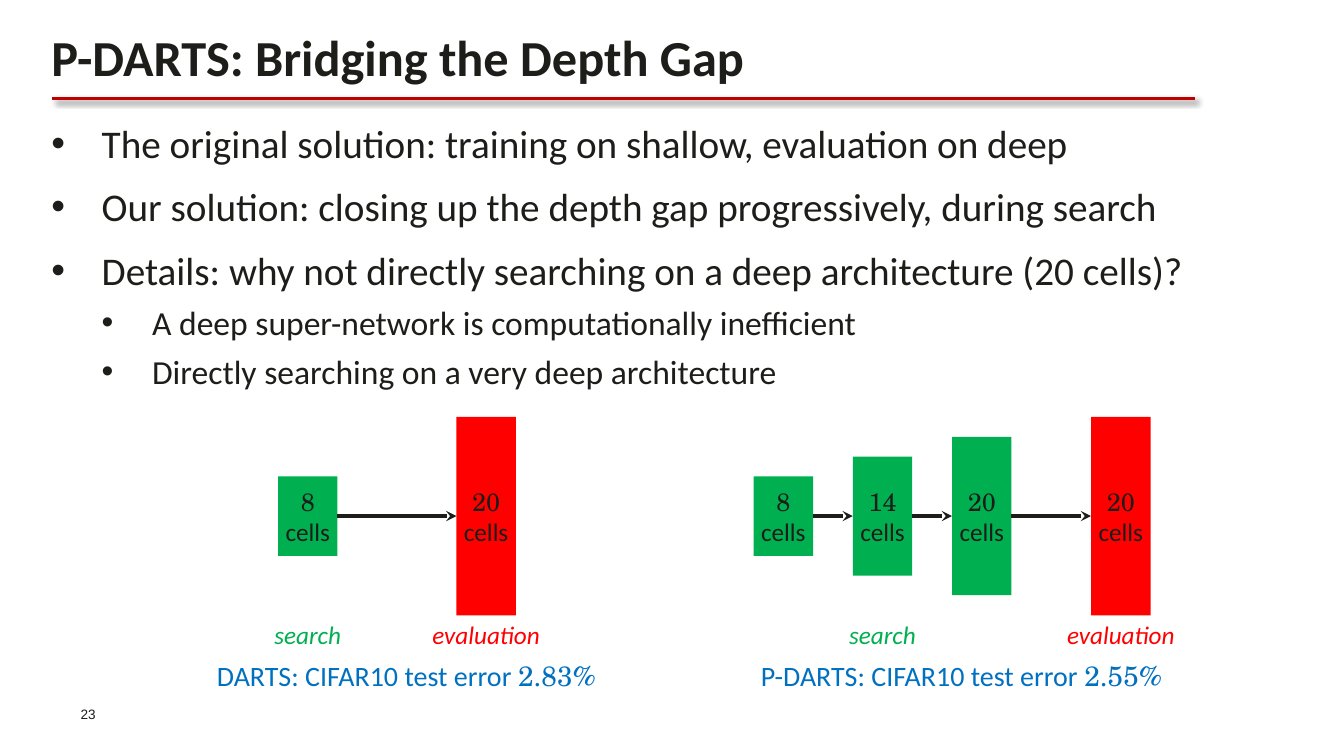
from dataclasses import dataclass

from lxml import etree
from pptx import Presentation
from pptx import util as u
from pptx.dml.color import RGBColor
from pptx.enum import shapes, text
from pptx.oxml import ns


@dataclass(frozen=True)
class Theme:
    sans: str = "Calibri"
    serif: str = "TeX Gyre Schola"
    small: str = "Arial"
    ink: str = "1D1D1A"
    rule: str = "C00000"
    search: str = "00B050"
    evaluation: str = "FF0000"
    caption: str = "0070C0"
    title_size: float = 36
    list_sizes: tuple = (28, 24)
    list_gaps: tuple = (12, 6)
    caption_size: float = 20
    label_size: float = 18
    number_size: float = 9.7


def sub(parent, tag, **attrs):
    return etree.SubElement(parent, ns.qn(tag), attrs)


def add_run(p, content, font, size, color, bold=False, italic=False):
    r = p.add_run()
    r.text = content
    r.font.name = font
    r.font.size = u.Pt(size)
    r.font.bold = bold
    r.font.italic = italic
    r.font.color.rgb = RGBColor.from_string(color)


class Deck:
    CELL_W, STEP, MID = 0.59, 0.39, 5.12
    PITCH = 0.985

    def __init__(self, prs, theme):
        self.theme = theme
        self.s = prs.slides.add_slide(prs.slide_layouts[1])

    def frame(self, sp, anchor=text.MSO_ANCHOR.MIDDLE):
        tf = sp.text_frame
        tf.word_wrap = True
        tf.auto_size = text.MSO_AUTO_SIZE.NONE
        tf.vertical_anchor = anchor
        tf.margin_left = tf.margin_right = tf.margin_top = tf.margin_bottom = 0
        return tf

    def place(self, sp, *box):
        sp.left, sp.top, sp.width, sp.height = map(u.Inches, box)

    def title(self, content):
        t, sp = self.theme, self.s.shapes.title
        self.place(sp, 0.51, 0.2, 11.34, 0.71)
        p = self.frame(sp).paragraphs[0]
        p.alignment = text.PP_ALIGN.LEFT
        add_run(p, content, t.sans, t.title_size, t.ink, bold=True)

    def bullets(self, items):
        t, sp = self.theme, self.s.placeholders[1]
        self.place(sp, 0.51, 1.18, 12.28, 5.67)
        tf = self.frame(sp, text.MSO_ANCHOR.TOP)
        for i, (level, content) in enumerate(items):
            p = tf.add_paragraph() if i else tf.paragraphs[0]
            p.level = level
            pPr = p._p.get_or_add_pPr()
            pPr.set("marL", str(u.Inches(0.5 * (level + 1))))
            pPr.set("indent", str(u.Inches(-0.5)))
            sub(pPr, "a:buChar", char="•")
            p.space_before = u.Pt(t.list_gaps[level] if i else 0)
            add_run(p, content, t.sans, t.list_sizes[level], t.ink)

    def textbox(self, box, runs, align=text.PP_ALIGN.CENTER, anchor=text.MSO_ANCHOR.MIDDLE):
        sp = self.s.shapes.add_textbox(*map(u.Inches, box))
        p = self.frame(sp, anchor).paragraphs[0]
        p.alignment = align
        for content, fmt in runs:
            add_run(p, content, **fmt)

    def line(self, x1, y1, x2, y2, color, width, arrow=False, shadow=False):
        sp = self.s.shapes.add_connector(
            shapes.MSO_CONNECTOR.STRAIGHT, *map(u.Inches, (x1, y1, x2, y2)))
        sp.line.color.rgb = RGBColor.from_string(color)
        sp.line.width = u.Pt(width)
        if arrow:
            sub(sp.line._get_or_add_ln(), "a:tailEnd", type="stealth")
        effects = sub(sp._element.spPr, "a:effectLst")
        if shadow:
            outer = sub(effects, "a:outerShdw", blurRad=str(u.Pt(4)), dist=str(u.Pt(3)),
                        dir="2700000", algn="tl", rotWithShape="0")
            sub(sub(outer, "a:srgbClr", val="000000"), "a:alpha", val="40000")

    def cell_box(self, x, count, height, color):
        t = self.theme
        sp = self.s.shapes.add_shape(
            shapes.MSO_SHAPE.RECTANGLE,
            *map(u.Inches, (x, self.MID - height / 2, self.CELL_W, height)))
        sp.shadow.inherit = False
        sp.fill.solid()
        sp.fill.fore_color.rgb = RGBColor.from_string(color)
        sp.line.fill.background()
        p = self.frame(sp).paragraphs[0]
        p.alignment = text.PP_ALIGN.CENTER
        add_run(p, f"{count} ", t.serif, t.label_size, t.ink)
        add_run(p, "cells", t.sans, t.label_size, t.ink)

    def label(self, center, content, color):
        fmt = dict(font=self.theme.sans, size=self.theme.label_size, color=color, italic=True)
        self.textbox((center - 0.69, 6.1, 1.38, 0.39), [(content, fmt)])

    def pipeline(self, caption, error, caption_x, search_x, search_counts, eval_x):
        t = self.theme
        fmt = dict(size=t.caption_size, color=t.caption)
        self.textbox((caption_x, 6.5, 4.53, 0.39),
                     [(f"{caption}: CIFAR10 test error ", dict(fmt, font=t.sans)),
                      (error, dict(fmt, font=t.serif))])
        xs = [search_x + i * self.PITCH for i in range(len(search_counts))]
        for i, (x, count) in enumerate(zip(xs, search_counts)):
            self.cell_box(x, count, self.STEP * (i + 2) + 0.01, t.search)
        self.cell_box(eval_x, 20, 1.97, t.evaluation)
        for x, following in zip(xs, xs[1:] + [eval_x]):
            self.line(x + self.CELL_W, self.MID, following, self.MID, t.ink, 2.5, arrow=True)
        self.label((xs[0] + xs[-1] + self.CELL_W) / 2, "search", t.search)
        self.label(eval_x + self.CELL_W / 2, "evaluation", t.evaluation)


def main():
    prs = Presentation()
    prs.slide_width, prs.slide_height = u.Inches(13.34), u.Inches(7.5)
    t = Theme()
    deck = Deck(prs, t)
    deck.title("P-DARTS: Bridging the Depth Gap")
    deck.line(0.52, 0.98, 11.86, 0.98, t.rule, 2.25, shadow=True)
    deck.bullets([
        (0, "The original solution: training on shallow, evaluation on deep"),
        (0, "Our solution: closing up the depth gap progressively, during search"),
        (0, "Details: why not directly searching on a deep architecture (20 cells)?"),
        (1, "A deep super-network is computationally inefficient"),
        (1, "Directly searching on a very deep architecture"),
    ])
    deck.pipeline("DARTS", "2.83%", 1.77, 2.76, [8], 4.53)
    deck.pipeline("P-DARTS", "2.55%", 7.28, 7.48, [8, 14, 20], 10.83)
    deck.textbox((0.8, 7, 0.55, 0.16),
                 [("23", dict(font=t.small, size=t.number_size, color=t.ink))],
                 text.PP_ALIGN.LEFT, text.MSO_ANCHOR.TOP)
    prs.save("out.pptx")


if __name__ == "__main__":
    main()
